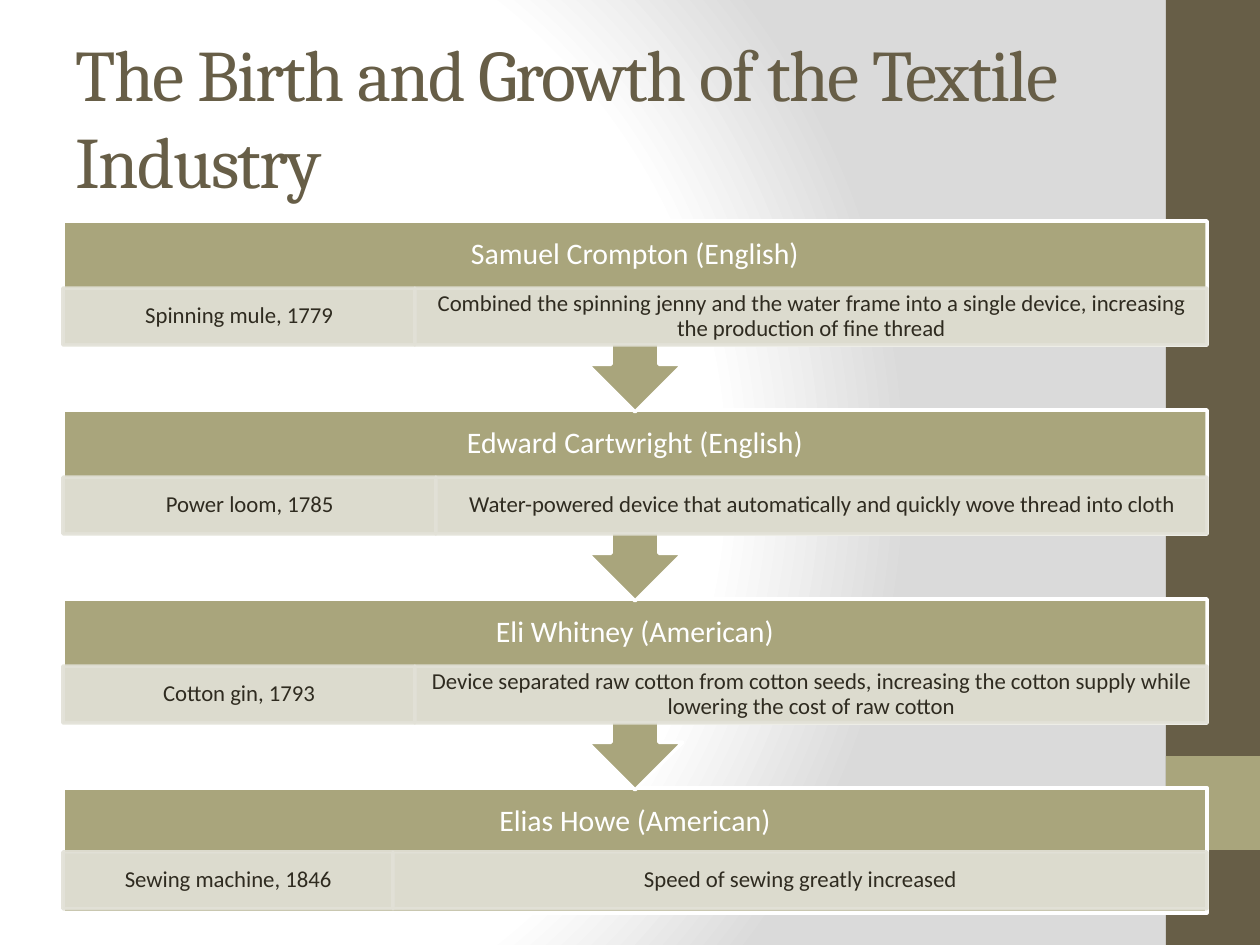
import pptx
import pptx.util
import pptx.dml.color
import pptx.enum.shapes
import pptx.enum.text
import pptx.oxml
import pptx.oxml.ns
import lxml.etree

RGBColor = pptx.dml.color.RGBColor
SHAPE = pptx.enum.shapes.MSO_SHAPE
ALIGN = pptx.enum.text.PP_ALIGN
MIDDLE = pptx.enum.text.MSO_ANCHOR.MIDDLE
Pt = pptx.util.Pt

BROWN = RGBColor(0x67, 0x5E, 0x47)
OLIVE = RGBColor(0xA9, 0xA5, 0x7C)
PALE = RGBColor(0xE2, 0xE1, 0xD7)
DARK = RGBColor(0x2F, 0x2B, 0x20)
WHITE = RGBColor(0xFF, 0xFF, 0xFF)

PX = 914400 / 126  # EMU in one px
LEFT, WIDTH = 63, 1144
TOP, STEP = 221, 189
CALLOUT_HEIGHT, LAST_HEIGHT = 191, 125
HEADER_HEIGHT, DETAIL_HEIGHT = 67, 57

BACKGROUND = f"""<a:gradFill {pptx.oxml.ns.nsdecls('a')} rotWithShape="1"><a:gsLst>
<a:gs pos="0"><a:srgbClr val="FFFFFF"/></a:gs>
<a:gs pos="75000"><a:srgbClr val="FFFFFF"/></a:gs>
<a:gs pos="100000"><a:srgbClr val="DADADA"/></a:gs></a:gsLst>
<a:path path="circle"><a:fillToRect l="20000" t="50000" r="100000" b="50000"/></a:path>
</a:gradFill>"""

# Inventor, invention, width of the invention cell, effect
INVENTORS = [
    ("Samuel Crompton (English)", "Spinning mule, 1779", 352,
     "Combined the spinning jenny and the water frame into a single device, "
     "increasing the production of fine thread"),
    ("Edward Cartwright (English)", "Power loom, 1785", 373,
     "Water-powered device that automatically and quickly wove thread into cloth"),
    ("Eli Whitney (American)", "Cotton gin, 1793", 352,
     "Device separated raw cotton from cotton seeds, increasing the cotton supply "
     "while lowering the cost of raw cotton"),
    ("Elias Howe (American)", "Sewing machine, 1846", 330,
     "Speed of sewing greatly increased"),
]

deck = pptx.Presentation()
deck.slide_width = round(1260 * PX)
deck.slide_height = round(945 * PX)
page = deck.slides.add_slide(deck.slide_layouts[5])


def add_block(kind, bounds, fill, line=None):
    block = page.shapes.add_shape(kind, *(round(length * PX) for length in bounds))
    block.shadow.inherit = False
    block.fill.solid()
    block.fill.fore_color.rgb = fill
    if line is None:
        block.line.fill.background()
    else:
        block.line.color.rgb = line
        block.line.width = Pt(2)
    return block


def write_centred(box, text, size, color, side, edge):
    """Fill the box with one centred paragraph; side and edge are insets in px."""
    frame = box.text_frame
    frame.word_wrap = True
    frame.vertical_anchor = MIDDLE
    frame.margin_left = frame.margin_right = round(side * PX)
    frame.margin_top = frame.margin_bottom = round(edge * PX)
    frame.text = text
    paragraph = frame.paragraphs[0]
    paragraph.alignment = ALIGN.CENTER
    paragraph.line_spacing = 0.9
    font = paragraph.runs[0].font
    font.name, font.size, font.color.rgb = "Calibri", Pt(size), color


# Background and side band
page.background.fill.solid()
solid = page.element.find(".//" + pptx.oxml.ns.qn("p:bgPr"))[0]
solid.getparent().replace(solid, pptx.oxml.parse_xml(BACKGROUND))
add_block(SHAPE.RECTANGLE, (1166, 0, 94, 945), BROWN)
add_block(SHAPE.RECTANGLE, (1166, 756, 94, 94), OLIVE)

# Title
title = page.shapes.title
title.left, title.top = round(63 * PX), round(38 * PX)
title.width, title.height = round(1050 * PX), round(157 * PX)
title.text_frame.text = "The Birth and Growth of the Textile Industry"
title.text_frame.word_wrap = True
title.text_frame.auto_size = pptx.enum.text.MSO_AUTO_SIZE.NONE
title.text_frame.vertical_anchor = MIDDLE
heading = title.text_frame.paragraphs[0]
heading.alignment = ALIGN.LEFT
span = heading.runs[0]
span.font.name, span.font.size, span.font.color.rgb = "Cambria", Pt(41.4), BROWN
span.font._element.set("spc", "-100")

# Steps, drawn from the last to the first so that each arrow lies on the next step
last = len(INVENTORS) - 1
for index in range(last, -1, -1):
    name, invention, split, effect = INVENTORS[index]
    top = TOP + STEP * index
    if index == last:
        add_block(SHAPE.RECTANGLE, (LEFT, top, WIDTH, LAST_HEIGHT), OLIVE, WHITE)
        detail_top = top + HEADER_HEIGHT - 3
    else:
        callout = add_block(SHAPE.UP_ARROW_CALLOUT,
                            (LEFT, top, WIDTH, CALLOUT_HEIGHT), OLIVE, WHITE)
        callout.rotation = 180
        detail_top = top + HEADER_HEIGHT

    header = page.shapes.add_textbox(
        *(round(length * PX) for length in (LEFT, top, WIDTH, HEADER_HEIGHT)))
    write_centred(header, name, 17, WHITE, 16, 16)

    for text, left, width in ((invention, LEFT, split),
                              (effect, LEFT + split, WIDTH - split)):
        cell = add_block(SHAPE.RECTANGLE, (left, detail_top, width, DETAIL_HEIGHT),
                         PALE, PALE)
        for color in cell.element.spPr.iter(pptx.oxml.ns.qn("a:srgbClr")):
            lxml.etree.SubElement(color, pptx.oxml.ns.qn("a:alpha"), val="90000")
        write_centred(cell, text, 13, DARK, 13, 2)

deck.save("out.pptx")
